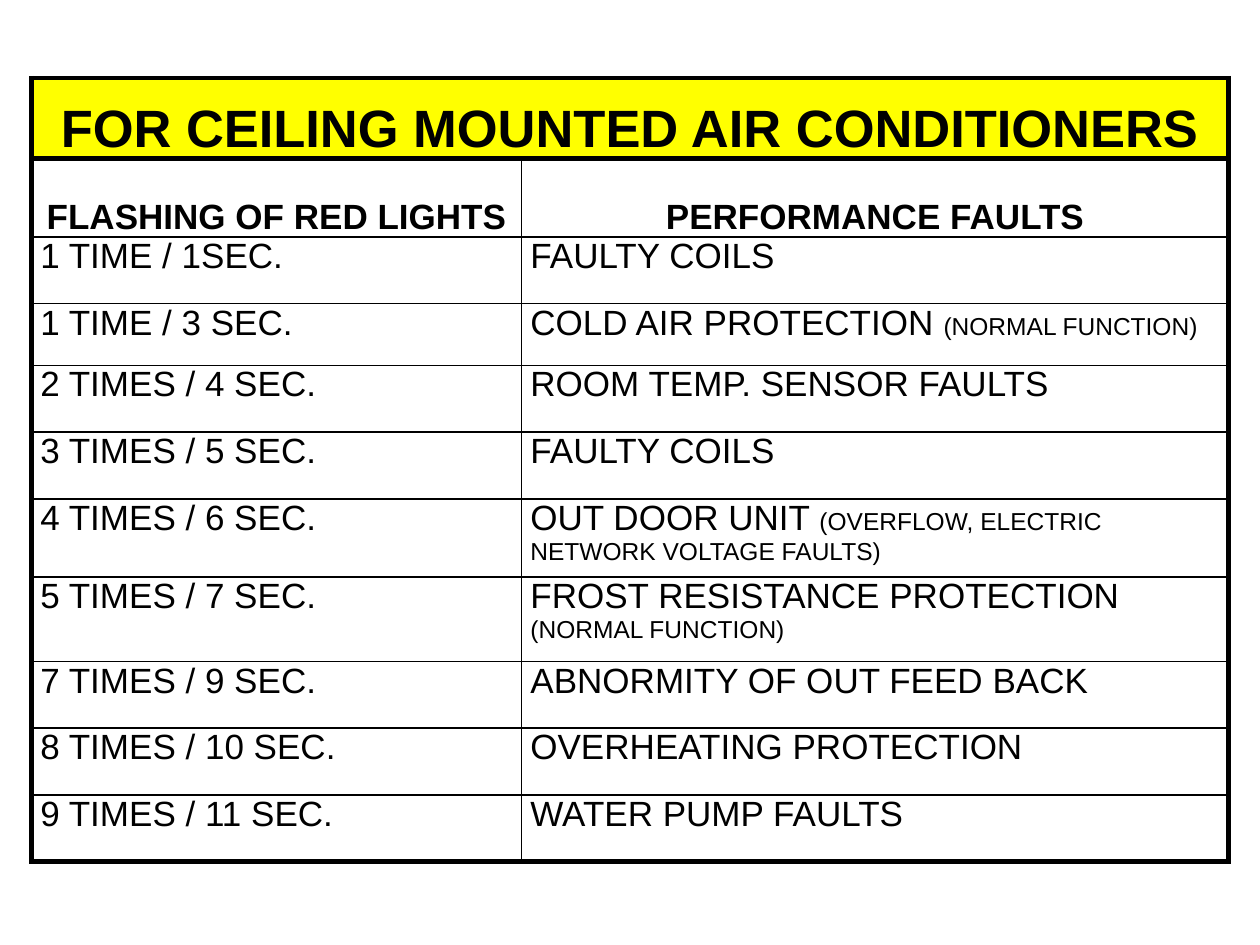
from lxml.etree import SubElement
from pptx import Presentation
from pptx.dml.color import RGBColor
from pptx.enum.text import MSO_ANCHOR as Anchor, PP_ALIGN as Align
from pptx.oxml.ns import qn
from pptx.util import Inches, Pt

BLACK = RGBColor(0, 0, 0)
YELLOW = RGBColor(255, 255, 0)
FONT = "Arial"
THICK, THIN = Pt(3), Pt(1)
TITLE_SIZE, BODY_SIZE, NOTE_SIZE = 30, 20, 14

TITLE = "FOR CEILING MOUNTED AIR CONDITIONERS"
HEADINGS = ("FLASHING OF RED LIGHTS", "PERFORMANCE FAULTS")
FAULTS = [
    ("1 TIME / 1SEC.", "FAULTY COILS", "", 0.53),
    ("1 TIME / 3 SEC.", "COLD AIR PROTECTION ", "(NORMAL FUNCTION)", 0.49),
    ("2 TIMES / 4 SEC.", "ROOM TEMP. SENSOR FAULTS", "", 0.53),
    ("3 TIMES / 5 SEC.", "FAULTY COILS", "", 0.53),
    ("4 TIMES / 6 SEC.", "OUT DOOR UNIT ",
     "(OVERFLOW, ELECTRIC NETWORK VOLTAGE FAULTS)", 0.62),
    ("5 TIMES / 7 SEC.", "FROST RESISTANCE PROTECTION ", "(NORMAL FUNCTION)", 0.67),
    ("7 TIMES / 9 SEC.", "ABNORMITY OF OUT FEED BACK", "", 0.53),
    ("8 TIMES / 10 SEC.", "OVERHEATING PROTECTION", "", 0.53),
    ("9 TIMES / 11 SEC.", "WATER PUMP FAULTS", "", 0.53),
]
COLUMN_WIDTHS = (3.89, 5.61)
ROW_HEIGHTS = [0.64, 0.62] + [fault[-1] for fault in FAULTS]


def add_run(para, text, size, bold=False):
    span = para.add_run()
    span.text = text
    span.font.name = FONT
    span.font.size = Pt(size)
    span.font.bold = bold
    span.font.color.rgb = BLACK


def write_cell(cell, pieces, align, bold=False, anchor=Anchor.TOP):
    cell.vertical_anchor = anchor
    para = cell.text_frame.paragraphs[0]
    para.alignment = align
    for text, size in pieces:
        add_run(para, text, size, bold)


def add_border(cell, side, width):
    properties = cell._tc.get_or_add_tcPr()
    line = SubElement(properties, qn(f"a:ln{side}"), w=str(width))
    fill = SubElement(line, qn("a:solidFill"))
    SubElement(fill, qn("a:srgbClr"), val=str(BLACK))


def style_cell(cell, row, column):
    cell.margin_left = cell.margin_right = Inches(0.07)
    cell.margin_top = cell.margin_bottom = 0
    is_title = row == 0
    thick_sides = {
        "L": column == 0,
        "R": is_title or column == len(COLUMN_WIDTHS) - 1,
        "T": row <= 1,
        "B": is_title or row == len(ROW_HEIGHTS) - 1,
    }
    for side, thick in thick_sides.items():
        add_border(cell, side, THICK if thick else THIN)
    if is_title:
        cell.fill.solid()
        cell.fill.fore_color.rgb = YELLOW
    else:
        cell.fill.background()


def add_grid(page):
    frame = page.shapes.add_table(
        len(ROW_HEIGHTS), len(COLUMN_WIDTHS), Inches(0.25), Inches(0.62),
        Inches(sum(COLUMN_WIDTHS)), Inches(sum(ROW_HEIGHTS)))
    table = frame.table
    table.first_row = table.horz_banding = False
    for column, width in zip(table.columns, COLUMN_WIDTHS):
        column.width = Inches(width)
    for row, height in zip(table.rows, ROW_HEIGHTS):
        row.height = Inches(height)
    for row in range(len(ROW_HEIGHTS)):
        for column in range(len(COLUMN_WIDTHS)):
            style_cell(table.cell(row, column), row, column)
    table.cell(0, 0).merge(table.cell(0, 1))
    return table


def fill_table(table):
    write_cell(table.cell(0, 0), [(TITLE, TITLE_SIZE)], Align.CENTER, True, Anchor.BOTTOM)
    for column, heading in enumerate(HEADINGS):
        write_cell(table.cell(1, column), [(heading, BODY_SIZE)],
                   Align.CENTER, True, Anchor.BOTTOM)
    for row, (flashes, fault, note, _) in enumerate(FAULTS, start=2):
        write_cell(table.cell(row, 0), [(flashes, BODY_SIZE)], Align.JUSTIFY)
        pieces = [(fault, BODY_SIZE)]
        if note:
            pieces.append((note, NOTE_SIZE))
        write_cell(table.cell(row, 1), pieces, Align.LEFT)


def main():
    deck = Presentation()
    deck.slide_width, deck.slide_height = Inches(10), Inches(7.5)
    page = deck.slides.add_slide(deck.slide_layouts[6])
    fill_table(add_grid(page))
    deck.save("out.pptx")


if __name__ == "__main__":
    main()
